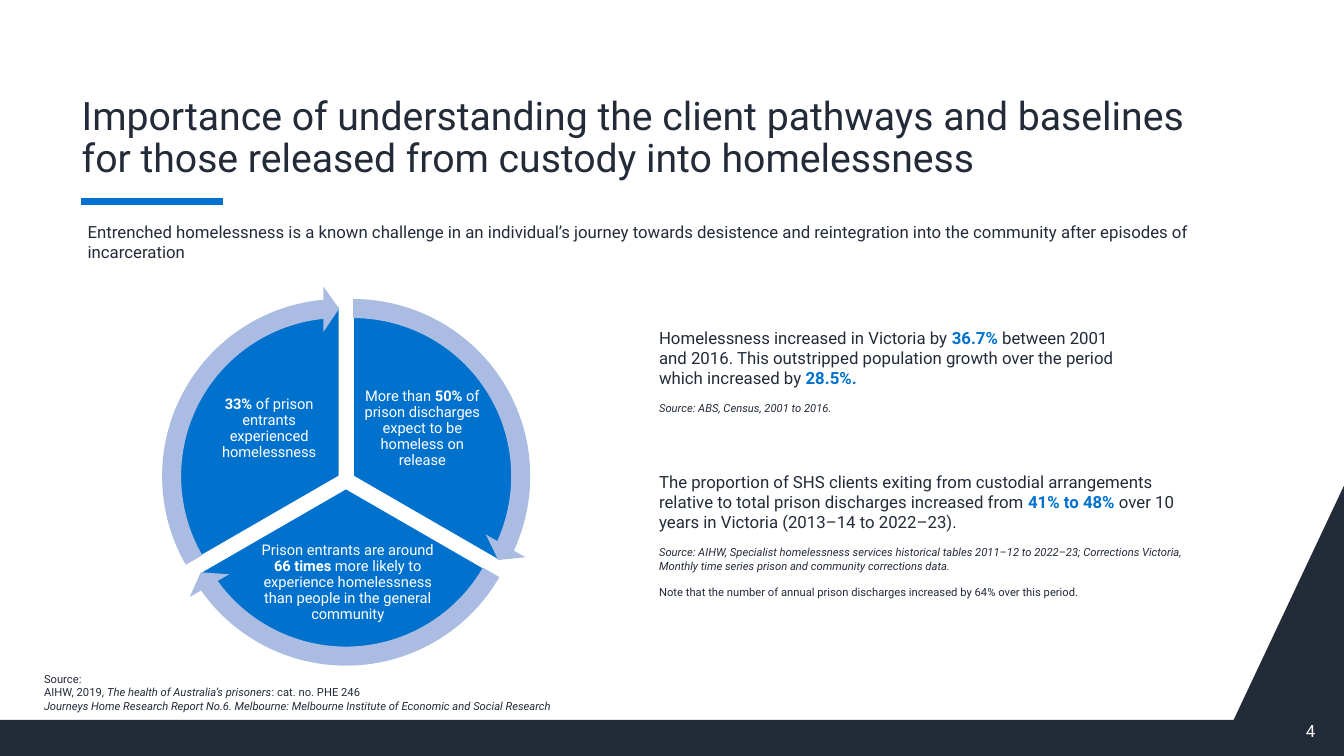
from pptx import Presentation
from pptx.dml.color import RGBColor
from pptx.enum import shapes, text
from pptx.oxml.ns import qn
from pptx.util import Cm, Pt

FONT = "Roboto"
NAVY, BLUE, PALE, WHITE = "232B39", "0072CE", "ABBCE3", "FFFFFF"
TOP, MIDDLE, BOTTOM = text.MSO_ANCHOR.TOP, text.MSO_ANCHOR.MIDDLE, text.MSO_ANCHOR.BOTTOM

# A paragraph is (size, space before, runs); a run is (text, style):
# b = bold, i = italic, k = key figure (bold blue).
TITLE = [(28, 0, [("Importance of understanding the client pathways and baselines "
                   "for those released from custody into homelessness", "")])]
LEAD = [(12, 0, [("Entrenched homelessness is a known challenge in an individual’s journey "
                  "towards desistence and reintegration into the community after episodes "
                  "of incarceration", "")])]
GROWTH = [
    (12, 0, [("Homelessness increased in Victoria by ", ""), ("36.7% ", "k"),
             ("between 2001 and 2016. This outstripped population growth over the period "
              "which increased by ", ""), ("28.5%.", "k")]),
    (8, 9.4, [("Source: ABS, Census, 2001 to 2016.", "i")]),
]
EXITS = [
    (12, 0, [("The proportion of SHS clients exiting from custodial arrangements relative "
              "to total prison discharges increased from ", ""), ("41% to 48% ", "k"),
             ("over 10 years in Victoria (2013–14 to 2022–23).", "")]),
    (8, 9.4, [("Source: AIHW, Specialist homelessness services historical tables 2011–12 to "
               "2022–23; Corrections Victoria, Monthly time series prison and community "
               "corrections data.", "i")]),
    (8, 9.4, [("Note that the number of annual prison discharges increased by 64% "
               "over this period.", "")]),
]
SOURCES = [
    (8, 0, [("Source:", "")]),
    (8, 0, [("AIHW, 2019, ", ""), ("The health of Australia’s prisoners", "i"),
            (": cat. no. PHE 246", "")]),
    (8, 0, [("Journeys Home Research Report No.6. Melbourne: Melbourne Institute of "
             "Economic and Social Research", "i")]),
]
PAGE_NUMBER = [(12, 0, [("4", "")])]

# Sector: centre (cm), label box (cm), label runs; clockwise from the top
SECTORS = [
    ((8.9, 12.0), (9.12, 9.53, 3.05, 2.54),
     [("More than ", ""), ("50% ", "b"),
      ("of prison discharges expect to be homeless on release", "")]),
    ((8.72, 12.31), (6.48, 13.56, 4.57, 2.24),
     [("Prison entrants are around ", ""), ("66 times ", "b"),
      ("more likely to experience homelessness than people in the general community", "")]),
    ((8.55, 12.0), (5.26, 9.53, 3.05, 2.54),
     [("33% ", "b"), ("of prison entrants experienced homelessness", "")]),
]
PIE_SIZE, RING_SIZE = 8.56, 9.6
DEGREE = 0.6  # one degree in adjustment units
FOOTER = [(31.09, 18.14), (0, 18.14), (0, 19.05), (33.87, 19.05), (33.87, 12.24)]


def rgb(value):
    return RGBColor.from_string(value)


def paint(shape, fill, line=None):
    shape.shadow.inherit = False
    shape.fill.solid()
    shape.fill.fore_color.rgb = rgb(fill)
    if line:
        shape.line.color.rgb = rgb(line)
        shape.line.width = Pt(1)
    else:
        shape.line.fill.background()


def add_text(slide, box, paragraphs, color=NAVY, anchor=TOP, inset=(0.25, 0.13),
             align=text.PP_ALIGN.LEFT, spacing=1.0):
    frame = slide.shapes.add_textbox(*map(Cm, box)).text_frame
    frame.word_wrap = True
    frame.vertical_anchor = anchor
    frame.margin_left = frame.margin_right = Cm(inset[0])
    frame.margin_top = frame.margin_bottom = Cm(inset[1])
    for index, (size, before, runs) in enumerate(paragraphs):
        paragraph = frame.add_paragraph() if index else frame.paragraphs[0]
        paragraph.alignment = align
        paragraph.line_spacing = spacing
        paragraph.space_before = Pt(before)
        paragraph.font.name = FONT
        paragraph.font.size = Pt(size)
        paragraph.font.color.rgb = rgb(color)
        for words, style in runs:
            run = paragraph.add_run()
            run.text = words
            if style in ("b", "k"):
                run.font.bold = True
            if style == "i":
                run.font.italic = True
            if style == "k":
                run.font.color.rgb = rgb(BLUE)


def add_round(slide, preset, center, size, adjustments, fill, line=None):
    """Add a preset of equal width and height around a centre point."""
    x, y = center
    shape = slide.shapes.add_shape(preset, Cm(x - size / 2), Cm(y - size / 2),
                                   Cm(size), Cm(size))
    for index, value in enumerate(adjustments):
        shape.adjustments[index] = value
    paint(shape, fill, line)


def add_cycle(slide):
    angles = [((270 + 120 * i) % 360 * DEGREE, (30 + 120 * i) % 360 * DEGREE)
              for i in range(len(SECTORS))]
    for (center, box, runs), (start, end) in zip(SECTORS, angles):
        add_round(slide, shapes.MSO_SHAPE.PIE, center, PIE_SIZE, (start, end), BLUE, WHITE)
        add_text(slide, box, [(10.5, 0, runs)], WHITE, MIDDLE, (0.05, 0.05),
                 text.PP_ALIGN.CENTER, 0.9)
    head = 3.27
    for (center, _, _), (start, end) in zip(SECTORS, angles):
        add_round(slide, shapes.MSO_SHAPE.CIRCULAR_ARROW, center, RING_SIZE,
                  (0.05, head, end - head, start, 0.06), PALE)


def add_frame(slide):
    builder = slide.shapes.build_freeform(*map(Cm, FOOTER[0]))
    builder.add_line_segments([(Cm(x), Cm(y)) for x, y in FOOTER[1:]])
    paint(builder.convert_to_shape(), NAVY)
    rule = slide.shapes.add_connector(shapes.MSO_CONNECTOR.STRAIGHT,
                                      Cm(2.04), Cm(5.08), Cm(5.62), Cm(5.08))
    rule.line.color.rgb = rgb(BLUE)
    rule.line.width = Pt(4.5)
    properties = rule._element.spPr
    properties.append(properties.makeelement(qn("a:effectLst"), {}))


def main():
    presentation = Presentation()
    presentation.slide_width, presentation.slide_height = Cm(33.87), Cm(19.05)
    slide = presentation.slides.add_slide(presentation.slide_layouts[6])
    add_frame(slide)
    add_text(slide, (1.96, 1.83, 29.21, 2.87), TITLE, anchor=BOTTOM, inset=(0.1, 0.13),
             spacing=0.9)
    add_cycle(slide)
    add_text(slide, (0.86, 16.81, 15.7, 1.27), SOURCES)
    add_text(slide, (16.36, 8.1, 12.19, 2.49), GROWTH, anchor=MIDDLE)
    add_text(slide, (16.36, 11.76, 14.07, 3.51), EXITS)
    add_text(slide, (1.96, 5.46, 29.21, 1.27), LEAD)
    add_text(slide, (32.66, 18.03, 1.21, 0.76), PAGE_NUMBER, WHITE)
    presentation.save("out.pptx")


if __name__ == "__main__":
    main()
